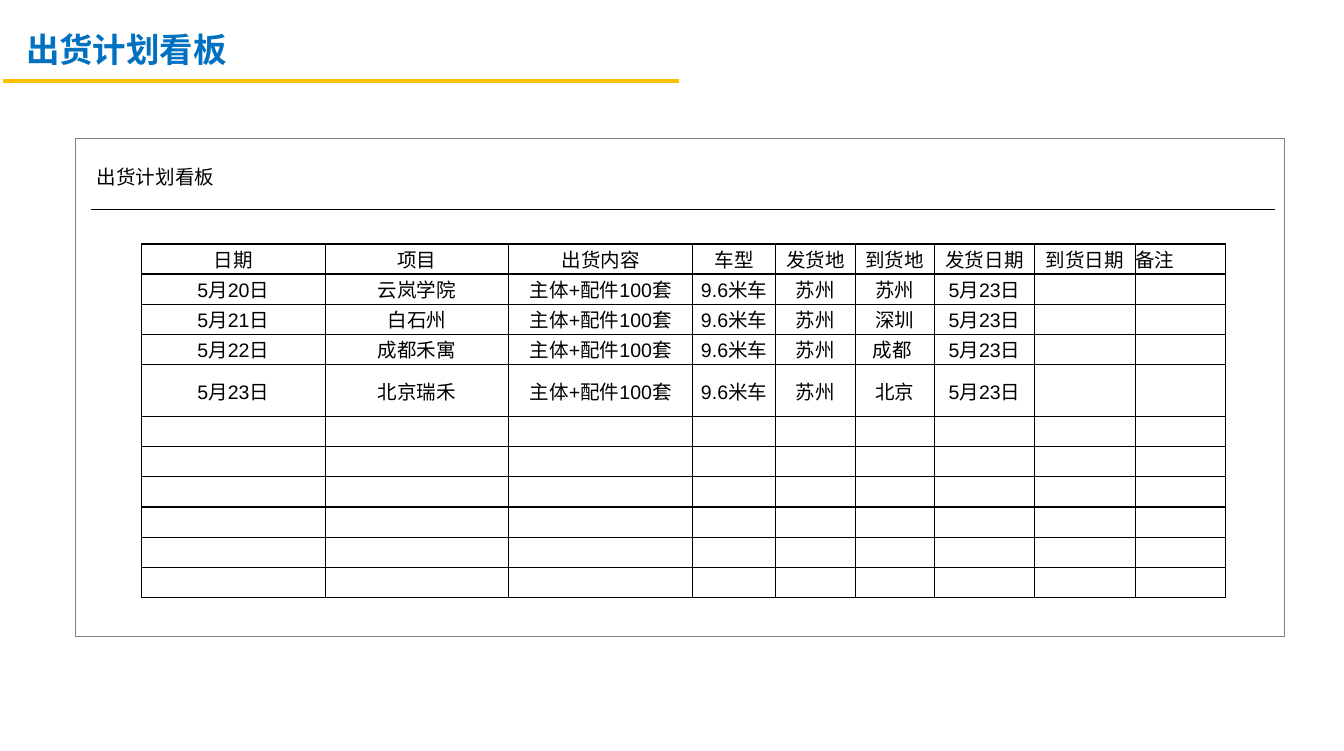
from lxml import etree
from pptx import Presentation
from pptx import util as u
from pptx.dml.color import RGBColor
from pptx.enum import shapes, text
from pptx.oxml import ns

HEADING = "出货计划看板"
COLUMNS = [("日期", 1.83), ("项目", 1.83), ("出货内容", 1.83), ("车型", 0.83),
           ("发货地", 0.79), ("到货地", 0.79), ("发货日期", 1), ("到货日期", 1),
           ("备注", 0.9)]
SHIPMENTS = [("5月20日", "云岚学院", "苏州"), ("5月21日", "白石州", "深圳"),
             ("5月22日", "成都禾寓", "成都 "), ("5月23日", "北京瑞禾", "北京")]
LOAD, TRUCK, ORIGIN, SHIP_DATE = "主体+配件100套", "9.6米车", "苏州", "5月23日"
BLANK_ROWS = 6
ROW_HEIGHT, TALL_ROW, TALL_HEIGHT = 0.3, 4, 0.52
COLORS = {"title": "0070C0", "rule": "FFC000", "frame": "808080", "ink": "000000"}
CJK = "Noto Sans CJK SC"


def inches(*lengths):
    return [u.Inches(length) for length in lengths]


def style_runs(paragraph, size, color, font=CJK, bold=False):
    for run in paragraph.runs:
        run.font.size, run.font.name, run.font.bold = u.Pt(size), font, bold
        run.font.color.rgb = RGBColor.from_string(COLORS[color])
        east_asian = etree.Element(ns.qn("a:ea"), typeface=CJK)
        run.font._element.find(ns.qn("a:latin")).addnext(east_asian)


def add_rule(left, right, y, color, width):
    rule = slide.shapes.add_connector(shapes.MSO_CONNECTOR.STRAIGHT,
                                      *inches(left, y, right, y))
    rule.line.color.rgb = RGBColor.from_string(COLORS[color])
    rule.line.width = u.Pt(width)
    etree.SubElement(rule._element.spPr, ns.qn("a:effectLst"))


def add_borders(cell):
    properties = cell._tc.get_or_add_tcPr()
    for side in ("lnL", "lnR", "lnT", "lnB"):
        border = etree.SubElement(properties, ns.qn(f"a:{side}"), w=str(u.Pt(1)))
        fill = etree.SubElement(border, ns.qn("a:solidFill"))
        etree.SubElement(fill, ns.qn("a:srgbClr"), val=COLORS["ink"])


def fill_cell(cell, content, align):
    cell.margin_left = cell.margin_right = cell.margin_top = cell.margin_bottom = 0
    cell.vertical_anchor = text.MSO_ANCHOR.MIDDLE
    add_borders(cell)
    cell.fill.background()
    paragraph = cell.text_frame.paragraphs[0]
    paragraph.alignment = align
    if content:
        paragraph.text = content
        style_runs(paragraph, 14, "ink", font="Arial")
    else:
        etree.SubElement(paragraph._p, ns.qn("a:endParaRPr"), sz="1400")


prs = Presentation()
prs.slide_width, prs.slide_height = inches(13.39, 7.48)
slide = prs.slides.add_slide(prs.slide_layouts[5])

title = slide.shapes.title
title.left, title.top, title.width, title.height = inches(0.16, 0.24, 3.24, 0.5)
title.text_frame.text = HEADING
title.text_frame.vertical_anchor = text.MSO_ANCHOR.TOP
title.text_frame.auto_size = text.MSO_AUTO_SIZE.SHAPE_TO_FIT_TEXT
title.text_frame.paragraphs[0].alignment = text.PP_ALIGN.LEFT
style_runs(title.text_frame.paragraphs[0], 24, "title", bold=True)
add_rule(0.03, 6.77, 0.81, "rule", 3)

board = slide.shapes.add_shape(shapes.MSO_SHAPE.RECTANGLE,
                               *inches(0.75, 1.38, 12.05, 4.96))
board.shadow.inherit = False
board.fill.background()
board.line.color.rgb = RGBColor.from_string(COLORS["frame"])
board.line.width = u.Pt(0.75)

board_label = slide.shapes.add_textbox(*inches(0.79, 1.54, 1.52, 0.42)).text_frame
board_label.text = HEADING
board_label.word_wrap = False
board_label.vertical_anchor = text.MSO_ANCHOR.MIDDLE
board_label.paragraphs[0].alignment = text.PP_ALIGN.CENTER
board_label.paragraphs[0].line_spacing = 1.1
style_runs(board_label.paragraphs[0], 14, "ink")
add_rule(0.91, 12.7, 2.09, "ink", 0.75)

headers = [header for header, _ in COLUMNS]
plan = [headers]
plan += [(date, project, LOAD, TRUCK, ORIGIN, destination, SHIP_DATE, "", "")
         for date, project, destination in SHIPMENTS]
plan += [[""] * len(COLUMNS)] * BLANK_ROWS
heights = [TALL_HEIGHT if r == TALL_ROW else ROW_HEIGHT for r in range(len(plan))]
schedule = slide.shapes.add_table(
    len(plan), len(COLUMNS),
    *inches(1.41, 2.43, sum(width for _, width in COLUMNS), sum(heights))).table
schedule.first_row = schedule.horz_banding = False
for column, (_, width) in zip(schedule.columns, COLUMNS):
    column.width = u.Inches(width)
for row, height, entries in zip(schedule.rows, heights, plan):
    row.height = u.Inches(height)
    for cell, entry in zip(row.cells, entries):
        is_remark = entry == headers[-1]
        fill_cell(cell, entry,
                  text.PP_ALIGN.LEFT if is_remark else text.PP_ALIGN.CENTER)

prs.save("out.pptx")
